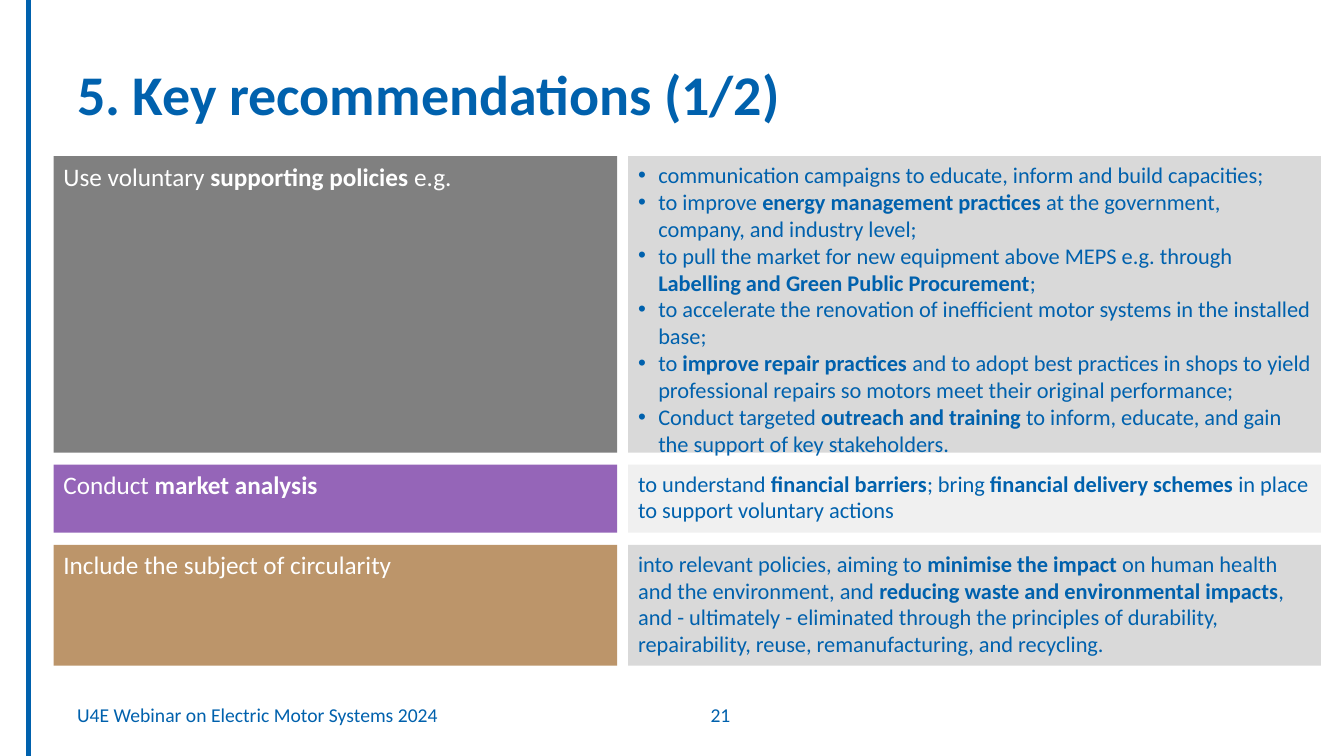
from lxml.etree import SubElement
from pptx import Presentation
from pptx.dml.color import RGBColor
from pptx.enum.shapes import MSO_CONNECTOR, MSO_SHAPE
from pptx.enum.text import MSO_ANCHOR, PP_ALIGN
from pptx.oxml.ns import qn
from pptx.util import Inches, Pt

BLUE, WHITE, GREY = "0061AD", "FFFFFF", "D9D9D9"


def rgb(value):
    return RGBColor.from_string(value)


def add_text(tf, text, size=16, color=BLUE, bold=False, font="Calibri",
             align=PP_ALIGN.LEFT, anchor=MSO_ANCHOR.TOP, after=0, bullet=False):
    """Write one paragraph per line; text between ** marks is bold."""
    tf.word_wrap = True
    tf.vertical_anchor = anchor
    for i, line in enumerate(text.split("\n")):
        p = tf.add_paragraph() if i else tf.paragraphs[0]
        p.alignment = align
        p.space_after = Pt(after)
        if bullet:
            pPr = p._p.get_or_add_pPr()
            pPr.set("marL", str(Inches(0.2)))
            pPr.set("indent", str(-Inches(0.2)))
            SubElement(pPr, qn("a:buFont")).set("typeface", "Arial")
            SubElement(pPr, qn("a:buChar")).set("char", "•")
        for j, part in enumerate(line.split("**")):
            if part:
                r = p.add_run()
                r.text = part
                r.font.name, r.font.size = font, Pt(size)
                r.font.bold = bold or j % 2 == 1
                r.font.color.rgb = rgb(color)


class Deck:
    """Places elements by percentages of the slide's width and height."""

    def __init__(self, width, height):
        self.prs = Presentation()
        self.prs.slide_width, self.prs.slide_height = Inches(width), Inches(height)
        self.s = self.prs.slides.add_slide(self.prs.slide_layouts[6])

    def box(self, x, y, w, h):
        pw, ph = self.prs.slide_width / 100, self.prs.slide_height / 100
        return [round(v) for v in (x * pw, y * ph, w * pw, h * ph)]

    def line(self, x, y, w, h, color, width):
        x, y, w, h = self.box(x, y, w, h)
        c = self.s.shapes.add_connector(MSO_CONNECTOR.STRAIGHT, x, y, x + w, y + h)
        c.line.color.rgb, c.line.width = rgb(color), Pt(width)
        SubElement(c._element.spPr, qn("a:effectLst"))

    def text(self, x, y, w, h, text, **style):
        sp = self.s.shapes.add_textbox(*self.box(x, y, w, h))
        add_text(sp.text_frame, text, anchor=MSO_ANCHOR.MIDDLE, **style)

    def panel(self, x, y, w, h, text, fill, opacity=100, **style):
        sp = self.s.shapes.add_shape(MSO_SHAPE.RECTANGLE, *self.box(x, y, w, h))
        sp.shadow.inherit = False
        sp.fill.solid()
        sp.fill.fore_color.rgb = rgb(fill)
        sp.line.fill.background()
        if opacity < 100:
            color = sp._element.spPr.find(qn("a:solidFill"))[0]
            SubElement(color, qn("a:alpha")).set("val", str(opacity * 1000))
        add_text(sp.text_frame, text, **style)


# Each row: height, (label, fill, opacity), (details, opacity, format)
ROWS = [
    (39.2, ("Use voluntary** supporting policies **e.g.", "808080", 100), (
        "communication campaigns to educate, inform and build capacities;\n"
        "to improve **energy management practices **at the government, company, "
        "and industry level;\n"
        "to pull the market for new equipment above MEPS e.g. through "
        "**Labelling and Green Public Procurement**;\n"
        "to accelerate the renovation of inefficient motor systems in the "
        "installed base;\n"
        "to **improve repair practices **and to adopt best practices in shops to "
        "yield professional repairs so motors meet their original performance;\n"
        "Conduct targeted **outreach and training **to inform, educate, and gain "
        "the support of key stakeholders.", 100, {"bullet": True})),
    (9, ("Conduct **market analysis**", "7030A0", 74), (
        "to understand **financial barriers**; bring **financial delivery schemes "
        "**in place to support voluntary actions", 37, {"after": 10})),
    (16, ("Include the subject of circularity", "AB7942", 79), (
        "into relevant policies, aiming to **minimise the impact **on human health "
        "and the environment, and **reducing waste and environmental impacts**, "
        "and - ultimately - eliminated through the principles of durability, "
        "repairability, reuse, remanufacturing, and recycling.", 100, {"after": 10})),
]


def main():
    deck = Deck(13.33, 7.5)

    # Side rule and title
    deck.line(2.1, 0, 0, 100, BLUE, 3.75)
    deck.text(5, 4, 90, 16.67, "5. Key recommendations (1/2)", size=40, bold=True)

    # Recommendation rows
    top, gap = 20.67, 1.6
    for height, (label, fill, opacity), (details, shade, style) in ROWS:
        deck.panel(3.98, top, 41.93, height, label, fill, opacity,
                   size=18, color=WHITE, after=10)
        deck.panel(46.74, top, 51.54, height, details, GREY, shade, **style)
        top += height + gap

    # Footer
    deck.text(5, 91.07, 31.66, 6.93, "U4E Webinar on Electric Motor Systems 2024", size=14)
    deck.text(41.94, 91.07, 23.33, 6.93, "21", size=14, align=PP_ALIGN.CENTER)

    deck.prs.save("out.pptx")


if __name__ == "__main__":
    main()
